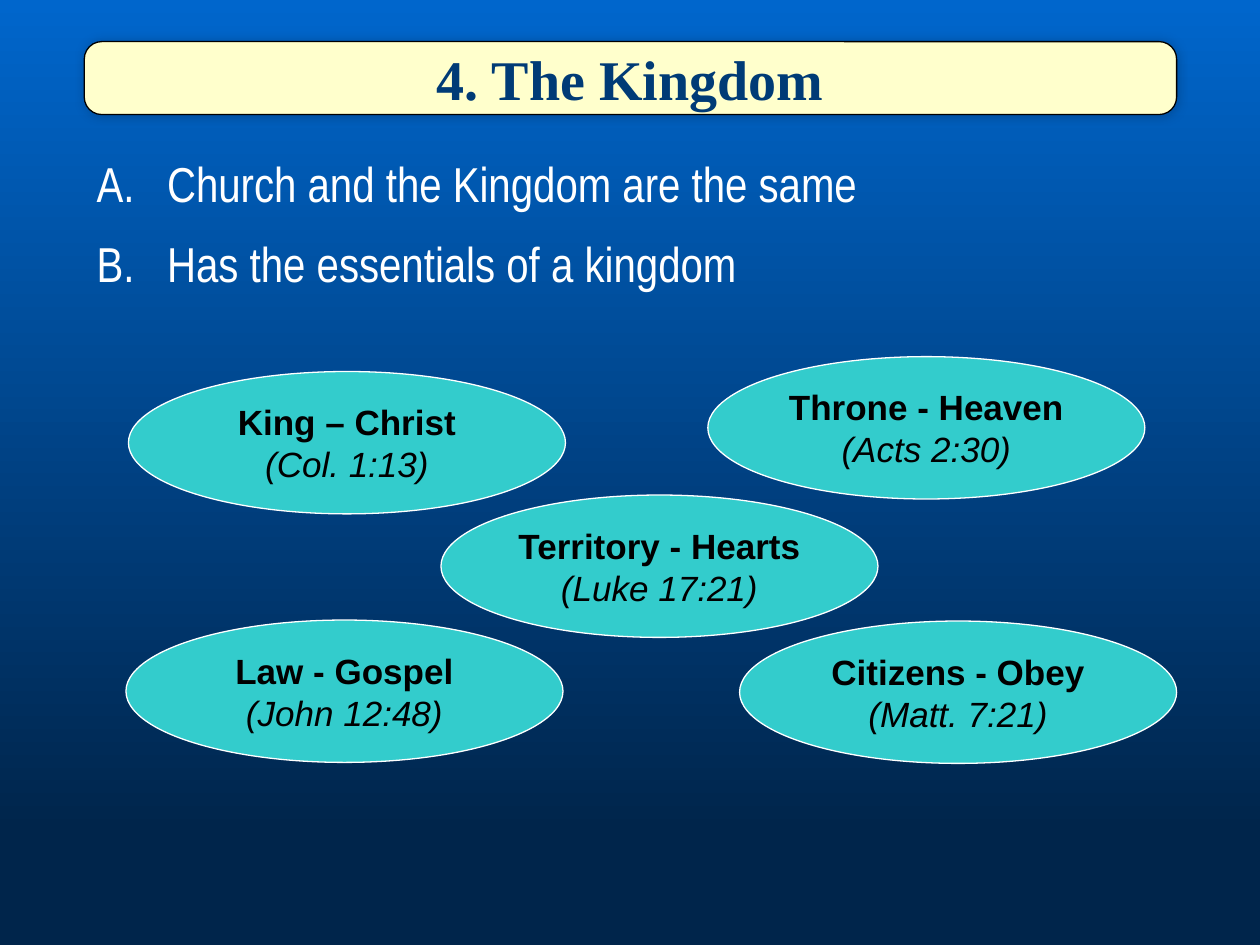
"""Build the slide "4. The Kingdom" with five essentials of a kingdom."""
import lxml.etree
import pptx
import pptx.dml.color
import pptx.enum.shapes
import pptx.enum.text
import pptx.oxml.ns
import pptx.util

COLORS = {
    "sky": "0066CC", "deep": "00254B", "banner": "FFFFCC", "title": "003B76",
    "ellipse": "33CCCC", "white": "FFFFFF", "black": "000000",
}
TITLE = "4. The Kingdom"
POINTS = ["Church and the Kingdom are the same", "Has the essentials of a kingdom"]
ESSENTIALS = [
    ("King – Christ", "(Col. 1:13)", 2.59, 7.49),
    ("Territory - Hearts", "(Luke 17:21)", 8.89, 9.98),
    ("Law - Gospel", "(John 12:48)", 2.54, 12.5),
    ("Throne - Heaven", "(Acts 2:30)", 14.27, 7.19),
    ("Citizens - Obey", "(Matt. 7:21)", 14.91, 12.52),
]
ELLIPSE_SIZE = (8.81, 2.87)
INDENT = pptx.util.Cm(1.42)
SHAPES = pptx.enum.shapes.MSO_SHAPE
CENTER = pptx.enum.text.PP_ALIGN.CENTER


def color(name):
    return pptx.dml.color.RGBColor.from_string(COLORS[name])


def add_child(parent, tag, **attributes):
    return lxml.etree.SubElement(parent, pptx.oxml.ns.qn(tag), attributes)


def style_text(paragraph, font_name, size, color_name, bold=False, italic=False):
    for run in paragraph.runs:
        font = run.font
        font.name, font.size = font_name, pptx.util.Pt(size)
        font.bold, font.italic = bold, italic
        font.color.rgb = color(color_name)


def add_panel(slide, kind, box, fill, line, text):
    shape = slide.shapes.add_shape(kind, *map(pptx.util.Cm, box))
    shape.shadow.inherit = False
    shape.fill.solid()
    shape.fill.fore_color.rgb = color(fill)
    shape.line.color.rgb = color(line)
    shape.line.width = pptx.util.Pt(0.75)
    shape.text_frame.text = text
    shape.text_frame.vertical_anchor = pptx.enum.text.MSO_ANCHOR.MIDDLE
    for paragraph in shape.text_frame.paragraphs:
        paragraph.alignment = CENTER
    return shape


def paint_background(slide):
    fill = slide.background.fill
    fill.gradient()
    fill.gradient_angle = 270
    for stop, name, position in zip(fill.gradient_stops, ("sky", "deep"), (0, 0.88)):
        stop.color.rgb = color(name)
        stop.position = position


def add_title(slide):
    banner = add_panel(slide, SHAPES.ROUNDED_RECTANGLE, (1.7, 0.84, 22.02, 1.47),
                       "banner", "black", TITLE)
    banner.adjustments[0] = 0.24
    banner.text_frame.word_wrap = False
    style_text(banner.text_frame.paragraphs[0], "Times New Roman", 32, "title", bold=True)
    effects = banner._element.spPr.find(pptx.oxml.ns.qn("a:effectLst"))
    shadow = add_child(effects, "a:outerShdw", blurRad=str(pptx.util.Pt(6)),
                       dist="0", dir="13500000", algn="ctr", rotWithShape="0")
    shade = add_child(shadow, "a:srgbClr", val=COLORS["black"])
    add_child(shade, "a:alpha", val="20000")


def add_points(slide):
    box = slide.shapes.add_textbox(*map(pptx.util.Cm, (1.7, 2.97, 22.86, 3.07)))
    box.text_frame.word_wrap = True
    box.text_frame.text = "\n".join(POINTS)
    for index, paragraph in enumerate(box.text_frame.paragraphs):
        style_text(paragraph, "Arial Narrow", 28, "white")
        paragraph.space_before = pptx.util.Pt(12 if index else 0)
        properties = paragraph._p.get_or_add_pPr()
        properties.set("marL", str(INDENT))
        properties.set("indent", str(-INDENT))
        add_child(properties, "a:buFont", typeface="Arial Narrow")
        add_child(properties, "a:buAutoNum", type="alphaUcPeriod")


def add_essentials(slide):
    for name, verse, left, top in ESSENTIALS:
        ellipse = add_panel(slide, SHAPES.OVAL, (left, top, *ELLIPSE_SIZE),
                            "ellipse", "white", f"{name}\n{verse}")
        heading, reference = ellipse.text_frame.paragraphs
        style_text(heading, "Arial", 20, "black", bold=True)
        style_text(reference, "Arial", 20, "black", italic=True)


def main():
    presentation = pptx.Presentation()
    presentation.slide_width = pptx.util.Cm(25.4)
    presentation.slide_height = pptx.util.Cm(19.05)
    slide = presentation.slides.add_slide(presentation.slide_layouts[6])
    paint_background(slide)
    add_title(slide)
    add_points(slide)
    add_essentials(slide)
    presentation.save("out.pptx")


if __name__ == "__main__":
    main()
